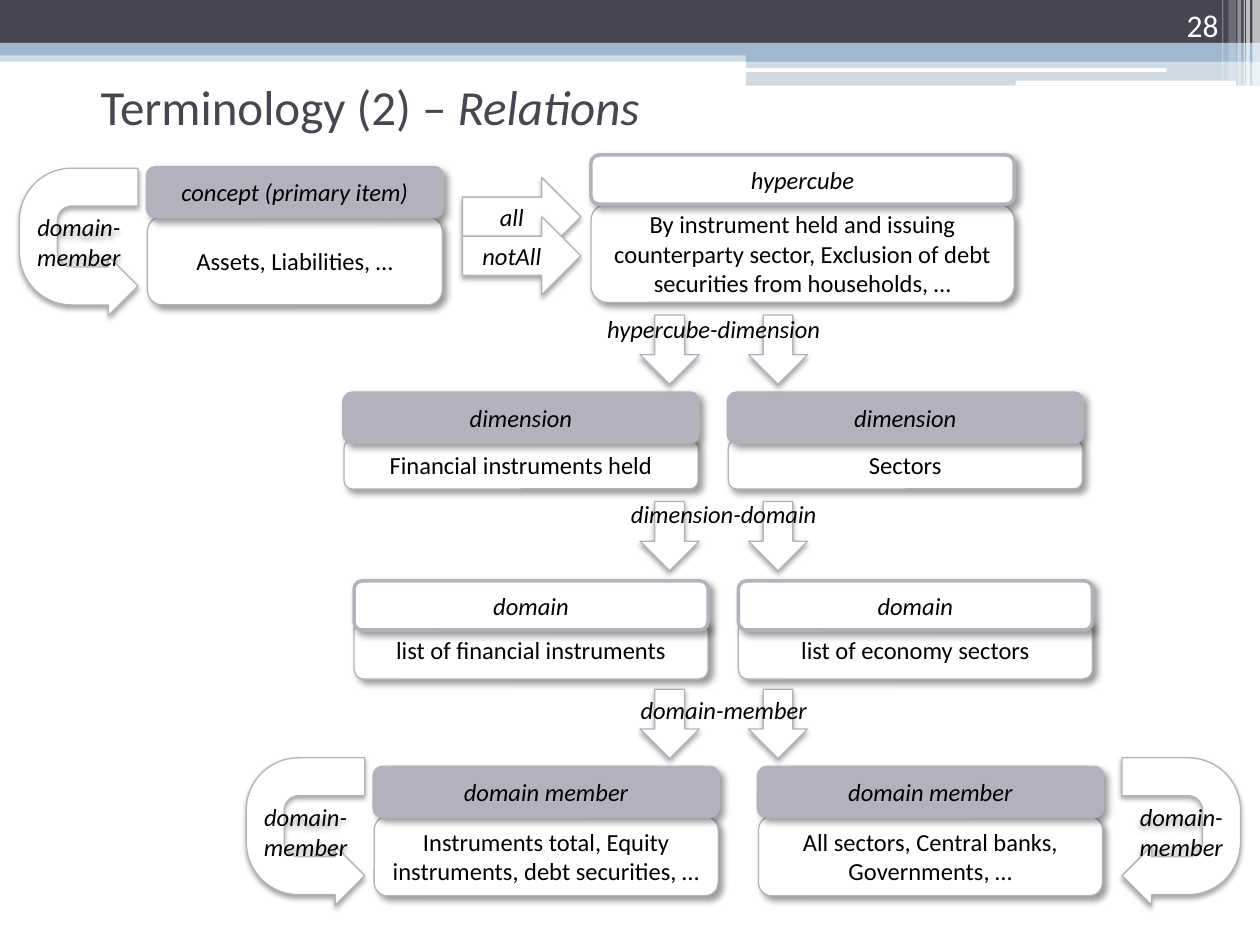
from pptx import Presentation, util as u
from pptx.dml.color import RGBColor
from pptx.enum import shapes, text
from pptx.oxml import parse_xml
from pptx.oxml.ns import nsdecls, qn

SHAPE = shapes.MSO_SHAPE
ALIGN = text.PP_ALIGN
ANCHOR = text.MSO_ANCHOR


def color(hex_string):
    return RGBColor.from_string(hex_string)


class Painter:
    font = "Calibri"
    dark, blue, grey = "464653", "9FB8CD", "B2B2BE"
    white, black = "FFFFFF", "000000"
    # alpha %, blur pt, distance pt, angle in degrees
    card_shadow = (40, 4, 3, 45)
    arrow_shadow = (35, 3.1, 1.8, 90)

    def __init__(self, page):
        self.page = page

    def shape(self, kind, x, y, w, h, fill, line=None, shadow=None):
        box = self.page.shapes.add_shape(
            kind, u.Inches(x), u.Inches(y), u.Inches(w), u.Inches(h))
        box.fill.solid()
        box.fill.fore_color.rgb = color(fill)
        if line:
            box.line.color.rgb = color(self.grey)
            box.line.width = u.Pt(line)
        else:
            box.line.fill.background()
        box.shadow.inherit = False
        if shadow:
            self.cast_shadow(box, *shadow)
        return box

    def cast_shadow(self, box, alpha, blur, distance, angle):
        effects = box._element.spPr.find(qn("a:effectLst"))
        effects.append(parse_xml(
            f'<a:outerShdw {nsdecls("a")} blurRad="{u.Pt(blur)}" dist="{u.Pt(distance)}" '
            f'dir="{angle * 60000}" algn="tl" rotWithShape="0">'
            f'<a:srgbClr val="{self.black}"><a:alpha val="{alpha * 1000}"/></a:srgbClr>'
            f'</a:outerShdw>'))

    def bar(self, x, y, w, h, fill, alpha=100, kind=SHAPE.RECTANGLE):
        box = self.shape(kind, x, y, w, h, fill)
        if alpha < 100:
            tint = box._element.spPr.find(qn("a:solidFill"))[0]
            tint.append(parse_xml(f'<a:alpha {nsdecls("a")} val="{alpha * 1000}"/>'))

    def add_text(self, box, runs, size=14, ink=black, align=ALIGN.CENTER, anchor=ANCHOR.MIDDLE):
        """Fill a box with one paragraph of (wording, italic) runs."""
        frame = box.text_frame
        frame.word_wrap = True
        frame.vertical_anchor = anchor
        para = frame.paragraphs[0]
        para.alignment = align
        for wording, italic in runs:
            span = para.add_run()
            span.text = wording
            span.font.name = self.font
            span.font.size = u.Pt(size)
            span.font.italic = italic
            span.font.color.rgb = color(ink)

    def label(self, x, y, w, h, runs, **style):
        box = self.page.shapes.add_textbox(
            u.Inches(x), u.Inches(y), u.Inches(w), u.Inches(h))
        self.add_text(box, runs, **style)

    def card(self, x, w, head, body, head_y, body_y, body_h, head_fill):
        """A body with its heading laid over the upper edge."""
        parts = ((body, False, body_y, body_h, self.white, 0.75),
                 (head, True, head_y, 0.39, head_fill, 2))
        for wording, italic, y, h, fill, line in parts:
            box = self.shape(SHAPE.ROUNDED_RECTANGLE, x, y, w, h, fill, line, self.card_shadow)
            self.add_text(box, [(wording, italic)])

    def arrow(self, kind, x, y, w, h, wording=None):
        box = self.shape(kind, x, y, w, h, self.white, 0.75, self.arrow_shadow)
        if wording:
            self.add_text(box, [(wording, True)])
        return box

    def loop(self, x, y, flipped):
        """A U-turn arrow on its side, with upright wording."""
        box = self.arrow(SHAPE.U_TURN_ARROW, x, y, 1.17, 0.94, "domain-member")
        for index, value in enumerate((0.32, 0.25, 0.25, 0.44, 1)):
            box.adjustments[index] = value
        box.rotation = 90
        if flipped:
            box._element.spPr.find(qn("a:xfrm")).set("flipV", "1")
        direction = "vert" if flipped else "vert270"
        box.text_frame._txBody.bodyPr.set("vert", direction)


def main():
    deck = Presentation()
    deck.slide_width, deck.slide_height = u.Inches(10), u.Inches(7.5)
    page = deck.slides.add_slide(deck.slide_layouts[6])
    paint = Painter(page)

    # Banner across the top
    paint.bar(0, 0.4, 10, 0.09, paint.blue, 50)
    paint.bar(0, 0, 10, 0.34, paint.dark)
    paint.bar(0, 0.34, 10, 0.1, paint.blue)
    paint.bar(5.92, 0.39, 4.08, 0.1, paint.blue)
    paint.bar(5.92, 0.48, 4.08, 0.2, paint.blue, 50)
    paint.bar(5.91, 0.54, 3.35, 0.03, paint.white, kind=SHAPE.ROUNDED_RECTANGLE)
    paint.bar(8.06, 0.64, 1.75, 0.04, paint.white, kind=SHAPE.ROUNDED_RECTANGLE)
    for x, w, h, alpha in ((9.94, 0.06, 0.68, 65), (9.89, 0.03, 0.68, 65),
                           (9.87, 0.01, 0.68, 60), (9.82, 0.03, 0.68, 40),
                           (9.75, 0.06, 0.64, 20), (9.7, 0.01, 0.64, 30)):
        paint.bar(x, 0, w, h, paint.white, alpha)

    # Page number and title
    paint.label(8.94, 0, 0.83, 0.4, [("28", False)], size=18, ink=paint.white,
                align=ALIGN.RIGHT, anchor=ANCHOR.BOTTOM)
    paint.label(0.7, 0.45, 9, 0.78, [("Terminology (2) – ", False), ("Relations", True)],
                size=28, ink=paint.dark, align=ALIGN.LEFT)

    # Concept and hypercube, with the arrows between them
    paint.card(1.17, 2.34, "concept (primary item)", "Assets, Liabilities, …",
               1.33, 1.72, 0.7, paint.grey)
    paint.card(4.69, 3.36, "hypercube",
               "By instrument held and issuing counterparty sector, "
               "Exclusion of debt securities from households, …",
               1.23, 1.62, 0.78, paint.white)
    for y, wording in ((1.41, "all"), (1.72, "notAll")):
        paint.arrow(SHAPE.RIGHT_ARROW, 3.67, y, 0.94, 0.62, wording)

    # Pairs of cards: instruments on the left, sectors on the right
    pairs = (
        (2.73, 2.81, "dimension", ("Financial instruments held", "Sectors"),
         3.12, 3.49, 0.39, paint.grey),
        (2.81, 2.81, "domain", ("list of financial instruments", "list of economy sectors"),
         4.61, 4.92, 0.47, paint.white),
        (2.97, 2.73, "domain member",
         ("Instruments total, Equity instruments, debt securities, …",
          "All sectors, Central banks, Governments, …"),
         6.09, 6.48, 0.63, paint.grey),
    )
    for left, w, head, bodies, *layout in pairs:
        for column, body in enumerate(bodies):
            paint.card(left + 3.05 * column, w, head, body, *layout)

    # Relations leading down from row to row
    for arrow_y, x, y, wording in ((2.5, 4.53, 2.44, "hypercube-dimension"),
                                   (3.98, 4.61, 3.91, "dimension-domain"),
                                   (5.47, 4.61, 5.47, "domain-member")):
        for arrow_x in (5.08, 5.94):
            paint.arrow(SHAPE.DOWN_ARROW, arrow_x, arrow_y, 0.47, 0.55)
        paint.label(x, y, 2.27, 0.33, [(wording, True)], anchor=ANCHOR.TOP)

    # Relations of members to themselves
    for x, y, flipped in ((0.04, 1.45, True), (1.84, 6.13, True), (8.79, 6.13, False)):
        paint.loop(x, y, flipped)

    deck.save("out.pptx")


if __name__ == "__main__":
    main()
